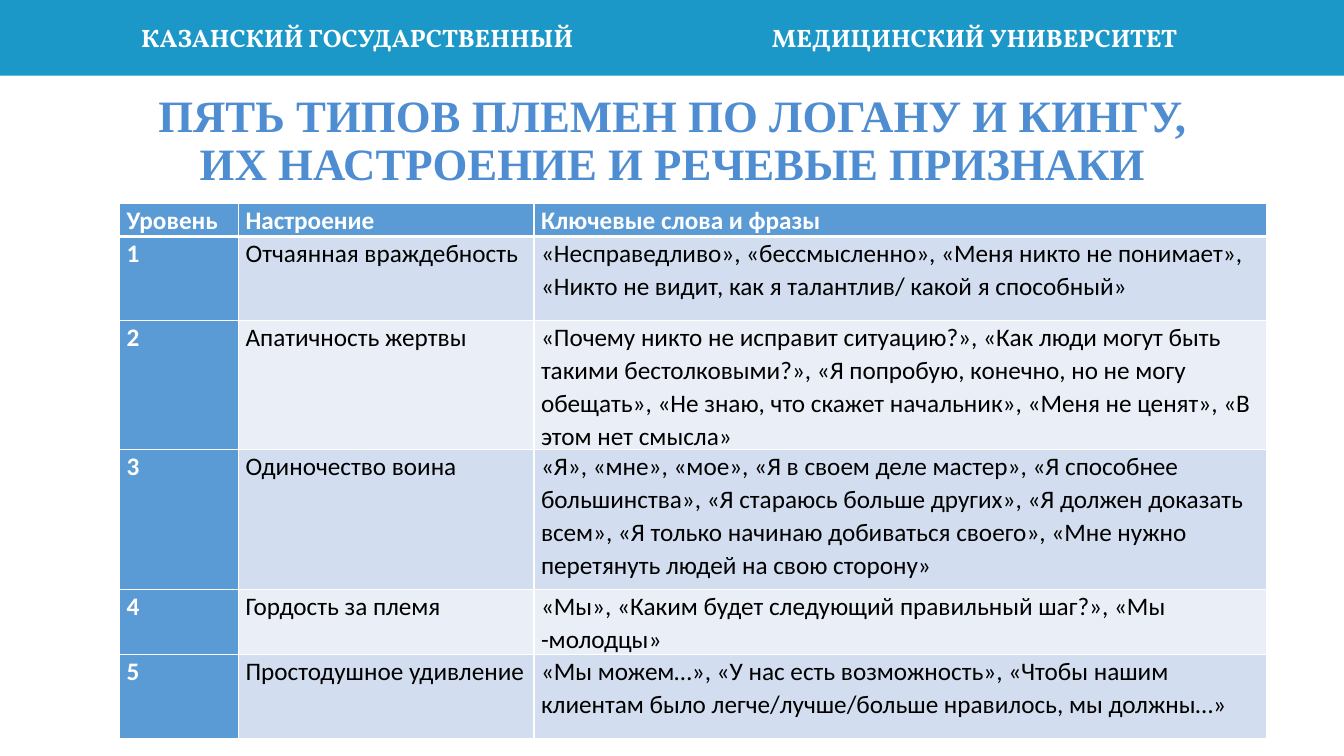
from dataclasses import dataclass

from pptx import Presentation
from pptx.dml.color import RGBColor
from pptx.enum.shapes import MSO_SHAPE
from pptx.enum.text import MSO_ANCHOR, PP_ALIGN
from pptx.oxml.ns import qn
from pptx.util import Inches, Pt
from lxml import etree

RECTANGLE = MSO_SHAPE.RECTANGLE
LEFT, CENTER, RIGHT = PP_ALIGN.LEFT, PP_ALIGN.CENTER, PP_ALIGN.RIGHT
MIDDLE = MSO_ANCHOR.MIDDLE

SLIDE_WIDTH, SLIDE_HEIGHT = Inches(13.33), Inches(7.5)


@dataclass(frozen=True)
class Theme:
    banner: str = "1B97C8"
    title: str = "4E8DD1"
    header: str = "5B9BD5"
    odd_row: str = "D2DEEF"
    even_row: str = "EAEFF7"
    light: str = "FFFFFF"
    dark: str = "000000"
    banner_font: str = "Vollkorn"
    title_font: str = "Times New Roman"
    table_font: str = "Calibri"
    body_size: int = 18
    title_size: int = 32


THEME = Theme()

COLUMN_WIDTHS = (1.18, 2.93, 7.27)
ROW_HEIGHTS = (0.33, 0.83, 1.11, 1.39, 0.55, 0.83)
TRIBES = (
    ("Уровень", "Настроение", "Ключевые слова и фразы"),
    ("1", "Отчаянная враждебность",
     "«Несправедливо», «бессмысленно», «Меня никто не понимает», "
     "«Никто не видит, как я талантлив/ какой я способный»"),
    ("2", "Апатичность жертвы",
     "«Почему никто не исправит ситуацию?», «Как люди могут быть такими "
     "бестолковыми?», «Я попробую, конечно, но не могу обещать», «Не знаю, "
     "что скажет начальник», «Меня не ценят», «В этом нет смысла»"),
    ("3", "Одиночество воина",
     "«Я», «мне», «мое», «Я в своем деле мастер», «Я способнее большинства», "
     "«Я стараюсь больше других», «Я должен доказать всем», «Я только начинаю "
     "добиваться своего», «Мне нужно перетянуть людей на свою сторону»"),
    ("4", "Гордость за племя",
     "«Мы», «Каким будет следующий правильный шаг?», «Мы -молодцы»"),
    ("5", "Простодушное удивление",
     "«Мы можем…», «У нас есть возможность», «Чтобы нашим клиентам было "
     "легче/лучше/больше нравилось, мы должны…»"),
)


def across(share):
    return int(SLIDE_WIDTH * share)


def down(share):
    return int(SLIDE_HEIGHT * share)


def style_paragraph(paragraph, font_name, size, color, bold, spacing, align=LEFT):
    paragraph.alignment = align
    paragraph.line_spacing = spacing
    for run in paragraph.runs:
        run.font.name = font_name
        run.font.size = Pt(size)
        run.font.bold = bold
        run.font.color.rgb = RGBColor.from_string(color)


def add_banner(slide, height):
    banner = slide.shapes.add_shape(RECTANGLE, 0, 0, SLIDE_WIDTH, height)
    banner.shadow.inherit = False
    banner.fill.solid()
    banner.fill.fore_color.rgb = RGBColor.from_string(THEME.banner)
    banner.line.fill.background()


def add_heading(slide, text, box, font_name, size, color, align, spacing=1.0):
    heading = slide.shapes.add_textbox(*box)
    text_frame = heading.text_frame
    text_frame.word_wrap = True
    text_frame.vertical_anchor = MIDDLE
    text_frame.text = text
    for paragraph in text_frame.paragraphs:
        style_paragraph(paragraph, font_name, size, color, True, spacing, align)


def set_borders(cell, bottom_points):
    """Draw white rules; they must precede the fill in the cell properties."""
    properties = cell._tc.get_or_add_tcPr()
    sides = (("a:lnL", 1), ("a:lnR", 1), ("a:lnT", 1), ("a:lnB", bottom_points))
    for position, (side, points) in enumerate(sides):
        line = etree.Element(qn(side), w=str(Pt(points)))
        fill = etree.SubElement(line, qn("a:solidFill"))
        etree.SubElement(fill, qn("a:srgbClr"), val=THEME.light)
        properties.insert(position, line)


def fill_cell(cell, text, row, column):
    is_header = row == 0 or column == 0
    band = THEME.odd_row if row % 2 else THEME.even_row
    cell.fill.solid()
    cell.fill.fore_color.rgb = RGBColor.from_string(THEME.header if is_header else band)
    cell.margin_left = cell.margin_right = Inches(0.07)
    cell.margin_top = cell.margin_bottom = 0
    cell.text_frame.text = text
    style_paragraph(cell.text_frame.paragraphs[0], THEME.table_font, THEME.body_size,
                    THEME.light if is_header else THEME.dark, is_header, 1.07)
    # The header row is closed by a heavier rule, shared with the row below
    set_borders(cell, 3 if row == 0 else 1)


def add_tribe_table(slide, left, top):
    frame = slide.shapes.add_table(
        len(TRIBES), len(COLUMN_WIDTHS), left, top,
        Inches(sum(COLUMN_WIDTHS)), Inches(sum(ROW_HEIGHTS)))
    table = frame.table
    table.first_col = True
    for column, width in zip(table.columns, COLUMN_WIDTHS):
        column.width = Inches(width)
    for row_number, (height, texts) in enumerate(zip(ROW_HEIGHTS, TRIBES)):
        table.rows[row_number].height = Inches(height)
        for column_number, text in enumerate(texts):
            fill_cell(table.cell(row_number, column_number), text,
                      row_number, column_number)


def main():
    presentation = Presentation()
    presentation.slide_width, presentation.slide_height = SLIDE_WIDTH, SLIDE_HEIGHT
    slide = presentation.slides.add_slide(presentation.slide_layouts[6])

    # University banner
    add_banner(slide, down(0.1))
    for text, left, align in (("КАЗАНСКИЙ ГОСУДАРСТВЕННЫЙ", 0.069, RIGHT),
                              ("МЕДИЦИНСКИЙ УНИВЕРСИТЕТ", 0.567, LEFT)):
        box = across(left), down(0.023), across(0.365), down(0.054)
        add_heading(slide, text, box, THEME.banner_font, THEME.body_size,
                    THEME.light, align)

    # Title
    title_box = across(0.069), down(0.115), across(0.863), down(0.145)
    add_heading(slide, "ПЯТЬ ТИПОВ ПЛЕМЕН ПО ЛОГАНУ И КИНГУ,\v"
                "ИХ НАСТРОЕНИЕ И РЕЧЕВЫЕ ПРИЗНАКИ", title_box,
                THEME.title_font, THEME.title_size, THEME.title, CENTER, 0.9)

    # Tribe levels
    add_tribe_table(slide, across(0.089), down(0.269))

    presentation.save("out.pptx")


if __name__ == "__main__":
    main()
